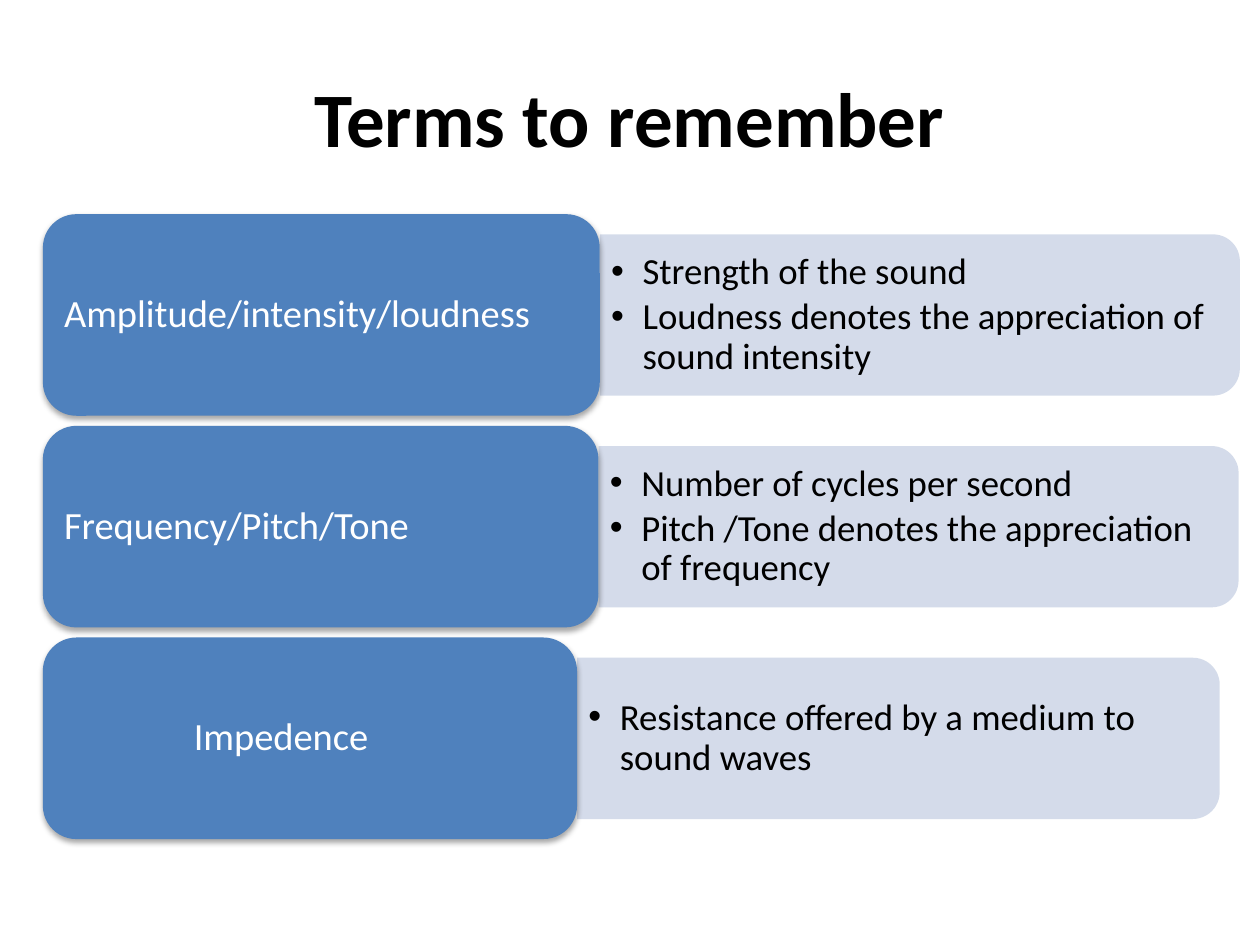
from dataclasses import dataclass

from lxml import etree
from pptx import Presentation
from pptx.dml.color import RGBColor
from pptx.enum.shapes import MSO_SHAPE
from pptx.enum.text import MSO_ANCHOR, PP_ALIGN
from pptx.oxml import parse_xml
from pptx.oxml.ns import nsdecls, qn
from pptx.util import Inches, Pt

ROUND = MSO_SHAPE.ROUNDED_RECTANGLE
TAB = MSO_SHAPE.ROUND_2_SAME_RECTANGLE
MIDDLE = MSO_ANCHOR.MIDDLE
CENTER, LEFT = PP_ALIGN.CENTER, PP_ALIGN.LEFT


@dataclass(frozen=True)
class Theme:
    font: str = "Calibri"
    black: RGBColor = RGBColor(0, 0, 0)
    white: RGBColor = RGBColor(255, 255, 255)
    blue: RGBColor = RGBColor(0x4F, 0x81, 0xBD)
    pale: RGBColor = RGBColor(0xD0, 0xD8, 0xE8)
    title: int = 44
    term: int = 22
    point: int = 21


THEME = Theme()

# Rows: left edge and widths in inches
EDGE, TOP, STEP = 0.34, 1.7, 1.68
TERM_H, TAB_H = 1.6, 1.28

# Term, term width, tab width, term indent, points
ROWS = [
    ("Amplitude/intensity/loudness", 4.42, 5.08, 0,
     ["Strength of the sound",
      "Loudness denotes the appreciation of sound intensity"]),
    ("Frequency/Pitch/Tone", 4.41, 5.08, 0,
     ["Number of cycles per second",
      "Pitch /Tone denotes the appreciation of frequency"]),
    ("Impedence", 4.24, 5.1, 1.03,
     ["Resistance offered by a medium to sound waves"]),
]


def style(para, size, color, align=LEFT, bold=False):
    para.alignment = align
    font = para.font
    font.name, font.size, font.bold = THEME.font, Pt(size), bold
    font.color.rgb = color


def indent(para, left, first=0):
    props = para._p.get_or_add_pPr()
    props.set("marL", str(Inches(left)))
    props.set("indent", str(Inches(first)))
    return props


def set_frame(frame, side, end):
    frame.word_wrap = True
    frame.vertical_anchor = MIDDLE
    frame.margin_left = frame.margin_right = Inches(side)
    frame.margin_top = frame.margin_bottom = Inches(end)


def add_box(slide, kind, left, top, width, height, color):
    box = slide.shapes.add_shape(
        kind, Inches(left), Inches(top), Inches(width), Inches(height))
    box.shadow.inherit = False
    box.fill.solid()
    box.fill.fore_color.rgb = color
    box.line.fill.background()
    return box


def add_title(slide, text):
    title = slide.shapes.title
    title.left, title.top = Inches(0.5), Inches(0.3)
    title.width, title.height = Inches(9), Inches(1.25)
    frame = title.text_frame
    frame.text = text
    frame.vertical_anchor = MIDDLE
    style(frame.paragraphs[0], THEME.title, THEME.black, CENTER, True)


def add_tab(slide, left, mid, width):
    # A quarter turn swaps width and height about the centre
    tab = add_box(slide, TAB, left + (width - TAB_H) / 2, mid - width / 2,
                  TAB_H, width, THEME.pale)
    tab.rotation = 90
    color = tab.fill._xPr.find(qn("a:solidFill"))[0]
    etree.SubElement(color, qn("a:alpha")).set("val", "90000")


def add_points(slide, left, mid, width, points):
    height = 1.15
    box = slide.shapes.add_textbox(
        Inches(left), Inches(mid - height / 2), Inches(width), Inches(height))
    frame = box.text_frame
    set_frame(frame, 0.09, 0.04)
    frame.text = "\n".join(points)
    for para in frame.paragraphs:
        style(para, THEME.point, THEME.black)
        para.line_spacing = 0.9
        para.space_after = Pt(3)
        props = indent(para, 0.25, -0.25)
        etree.SubElement(props, qn("a:buFont")).set("typeface", "Arial")
        etree.SubElement(props, qn("a:buChar")).set("char", "•")
        # Run defaults come last in the paragraph properties
        props.append(props.find(qn("a:defRPr")))


def add_term(slide, top, width, text, shift):
    box = add_box(slide, ROUND, EDGE, top, width, TERM_H, THEME.blue)
    effects = box._element.spPr.find(qn("a:effectLst"))
    effects.append(parse_xml(
        f'<a:outerShdw {nsdecls("a")} blurRad="40000" dist="23000" '
        'dir="5400000" rotWithShape="0"><a:srgbClr val="000000">'
        '<a:alpha val="35000"/></a:srgbClr></a:outerShdw>'))
    frame = box.text_frame
    set_frame(frame, 0.09, 0.05)
    frame.text = text
    para = frame.paragraphs[0]
    style(para, THEME.term, THEME.white)
    para.line_spacing = 0.9
    indent(para, shift)


def main():
    deck = Presentation()
    deck.slide_width, deck.slide_height = Inches(10), Inches(7.5)
    slide = deck.slides.add_slide(deck.slide_layouts[5])
    add_title(slide, "Terms to remember")

    # One row per term: tab behind, its points, then the term
    for i, (term, width, span, shift, points) in enumerate(ROWS):
        top = TOP + i * STEP
        mid, left = top + TERM_H / 2, EDGE + width
        add_tab(slide, left, mid, span)
        add_points(slide, left, mid, span - 0.07, points)
        add_term(slide, top, width, term, shift)

    deck.save("out.pptx")


if __name__ == "__main__":
    main()
